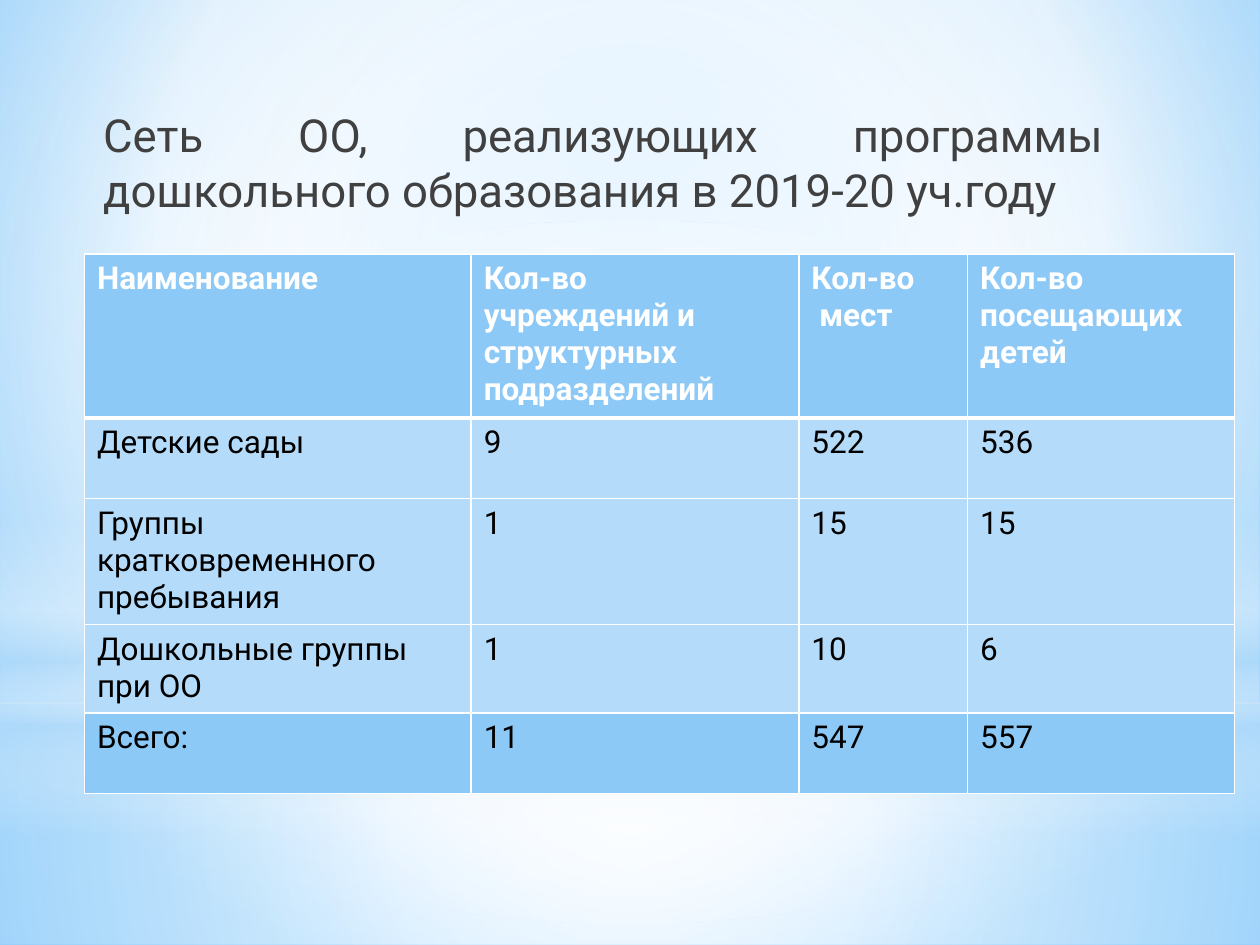
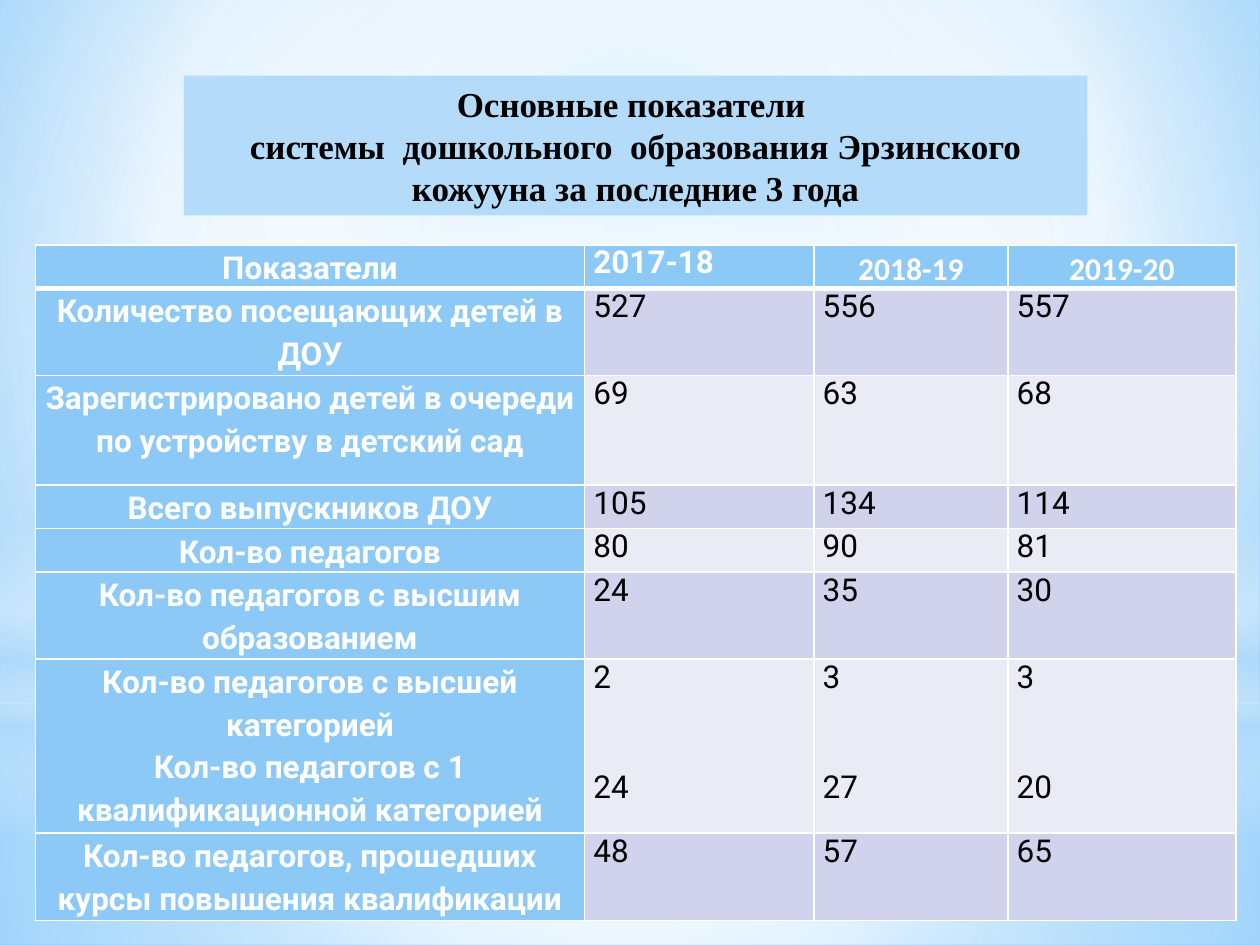
from lxml.etree import SubElement
from pptx import Presentation
from pptx.dml.color import RGBColor
from pptx.enum.shapes import MSO_SHAPE
from pptx.enum.text import MSO_ANCHOR, PP_ALIGN
from pptx.oxml.ns import qn
from pptx.util import Inches, Pt

WIDTH, HEIGHT = Inches(10), Inches(7.5)
WHITE = RGBColor(0xFF, 0xFF, 0xFF)
BLACK = RGBColor(0x00, 0x00, 0x00)
GRAPHITE = RGBColor(0x40, 0x40, 0x40)
SKY = RGBColor(0x9E, 0xD5, 0xFF)
AZURE = RGBColor(0x5B, 0xB9, 0xFF)
BLUE = RGBColor(0x8C, 0xC9, 0xF7)
PALE_BLUE = RGBColor(0xB4, 0xDC, 0xFA)
LILAC = RGBColor(0xD0, 0xD3, 0xEB)
PALE_LILAC = RGBColor(0xE9, 0xEB, 0xF5)
SANS, SERIF, HUMANIST = "Roboto", "Times New Roman", "Calibri"
CENTRE = (50, 50, 50, 50)

GLOWS = [
    (MSO_SHAPE.RECTANGLE, (0, 0.744, 1, 0.256),
     [(0, WHITE, 91), (37, WHITE, 76), (100, PALE_BLUE, 79)], CENTRE),
    (MSO_SHAPE.RECTANGLE, (0, 0, 1, 0.744),
     [(0, WHITE, 89), (48, WHITE, 62), (100, PALE_BLUE, 79)], CENTRE),
    (MSO_SHAPE.RECTANGLE, (0, 0.55, 1, 0.333),
     [(0, WHITE, 0), (29, WHITE, 30), (45, PALE_BLUE, 40),
      (55, WHITE, 26), (65, PALE_BLUE, 60), (100, WHITE, 0)], None),
    (MSO_SHAPE.OVAL, (0, 0.233, 1, 0.744),
     [(0, WHITE, 100), (56, WHITE, 0)], CENTRE),
]

NETWORK = [
    ["Наименование", "Кол-во\nучреждений и структурных подразделений",
     "Кол-во\n мест", "Кол-во\nпосещающих\nдетей"],
    ["Детские сады", "9", "522", "536"],
    ["Группы кратковременного пребывания", "1", "15", "15"],
    ["Дошкольные группы при ОО", "1", "10", "6"],
    ["Всего:", "11", "547", "557"],
]

INDICATORS = [
    ["Показатели", "2017-18", "2018-19", "2019-20"],
    ["Количество посещающих детей в ДОУ", "527", "556", "557"],
    ["Зарегистрировано детей в очереди по устройству в детский сад",
     "69", "63", "68"],
    ["Всего выпускников ДОУ", "105", "134", "114"],
    ["Кол-во педагогов", "80", "90", "81"],
    ["Кол-во педагогов с высшим образованием", "24", "35", "30"],
    ["Кол-во педагогов с высшей категорией\n"
     "Кол-во педагогов с 1 квалификационной категорией",
     "2\n24", "3\n27", "3\n20"],
    ["Кол-во педагогов, прошедших курсы повышения квалификации",
     "48", "57", "65"],
]


def place(box):
    x, y, w, h = box
    return int(x * WIDTH), int(y * HEIGHT), int(w * WIDTH), int(h * HEIGHT)


def set_gradient(fill, element, stops, focus):
    fill.gradient()
    grad = element.find(".//" + qn("a:gradFill"))
    for child in list(grad):
        grad.remove(child)
    gs_list = SubElement(grad, qn("a:gsLst"))
    for pos, color, alpha in stops:
        gs = SubElement(gs_list, qn("a:gs"), pos=str(pos * 1000))
        clr = SubElement(gs, qn("a:srgbClr"), val=str(color))
        if alpha < 100:
            SubElement(clr, qn("a:alpha"), val=str(alpha * 1000))
    if focus:
        route = SubElement(grad, qn("a:path"))
        route.set("path", "circle")
        SubElement(route, qn("a:fillToRect"),
                   {k: str(v * 1000) for k, v in zip("ltrb", focus)})
    else:
        SubElement(grad, qn("a:lin"), ang="5400000", scaled="0")


def format_text(p, font, size, color, bold=False):
    for r in p.runs:
        r.font.name, r.font.size, r.font.bold = font, Pt(size), bold
        r.font.color.rgb = color


def set_borders(cell, widths):
    tc_pr = cell._tc.get_or_add_tcPr()
    for i, (side, width) in enumerate(zip("LRTB", widths)):
        ln = SubElement(tc_pr, qn("a:ln" + side), w=str(Pt(width)))
        solid = SubElement(ln, qn("a:solidFill"))
        SubElement(solid, qn("a:srgbClr"), val=str(WHITE))
        tc_pr.remove(ln)
        tc_pr.insert(i, ln)


def add_glow_slide(prs):
    slide = prs.slides.add_slide(prs.slide_layouts[6])
    for shape, box, stops, focus in GLOWS:
        sp = slide.shapes.add_shape(shape, *place(box))
        sp.shadow.inherit = False
        sp.line.fill.background()
        set_gradient(sp.fill, sp._element, stops, focus)
    return slide


def add_grid(slide, box, data, cols, rows, style_cell):
    x, y, w, h = place(box)
    table = slide.shapes.add_table(len(data), len(cols), x, y, w, h).table
    for column, share in zip(table.columns, cols):
        column.width = int(w * share / sum(cols))
    for row, share in zip(table.rows, rows):
        row.height = int(h * share / sum(rows))
    for i, values in enumerate(data):
        for j, value in enumerate(values):
            cell = table.cell(i, j)
            cell.text_frame.text = value
            cell.fill.solid()
            style_cell(cell, i, j)
            set_borders(cell, (1, 1, 3 if i == 1 else 1, 3 if i == 0 else 1))


def style_network_cell(cell, i, j):
    cell.fill.fore_color.rgb = BLUE if i in (0, len(NETWORK) - 1) else PALE_BLUE
    for p in cell.text_frame.paragraphs:
        format_text(p, SANS, 18, BLACK if i else WHITE, i == 0)


def style_indicator_cell(cell, i, j):
    heading = i == 0 or j == 0
    band = LILAC if i % 2 else PALE_LILAC
    cell.fill.fore_color.rgb = BLUE if heading else band
    cell.margin_left = cell.margin_right = Inches(0.07)
    cell.margin_top = cell.margin_bottom = 0
    font = HUMANIST if i == 0 and j > 1 else SANS
    for k, p in enumerate(cell.text_frame.paragraphs):
        if heading and (i, j) != (0, 1):
            p.alignment, p.line_spacing = PP_ALIGN.CENTER, 1.15
        elif k:
            p.space_before = Pt(42)
        format_text(p, font, 18, WHITE if heading else BLACK, heading)


def add_plain_title(slide, box, text):
    tf = slide.shapes.add_textbox(*place(box)).text_frame
    tf.word_wrap = True
    tf.text = text
    p = tf.paragraphs[0]
    p.alignment = PP_ALIGN.JUSTIFY
    p.space_before, p.space_after = Pt(5), Pt(3)
    p._p.get_or_add_pPr().set("marL", str(Inches(0.05)))
    format_text(p, SANS, 26, GRAPHITE)


def add_title_plate(slide, box, text):
    sp = slide.shapes.add_shape(MSO_SHAPE.RECTANGLE, *place(box))
    sp.shadow.inherit = False
    sp.fill.solid()
    sp.fill.fore_color.rgb = PALE_BLUE
    sp.line.fill.background()
    tf = sp.text_frame
    tf.word_wrap = True
    tf.vertical_anchor = MSO_ANCHOR.MIDDLE
    tf.text = text
    for p in tf.paragraphs:
        p.alignment = PP_ALIGN.CENTER
        format_text(p, SERIF, 20, BLACK, True)


def build_network_slide(prs):
    slide = add_glow_slide(prs)
    add_plain_title(slide, (0.067, 0.107, 0.819, 0.781),
                    "Сеть ОО, реализующих программы дошкольного образования "
                    "в 2019-20 уч.году")
    add_grid(slide, (0.067, 0.269, 0.913, 0.563), NETWORK,
             (3.07, 2.6, 1.34, 2.12), (1.27, 0.64, 0.98, 0.69, 0.64),
             style_network_cell)


def build_indicators_slide(prs):
    slide = add_glow_slide(prs)
    add_title_plate(slide, (0.146, 0.08, 0.717, 0.148),
                    "Основные показатели \nсистемы  дошкольного  образования "
                    "Эрзинского кожууна за последние 3 года")
    add_grid(slide, (0.028, 0.259, 0.953, 0.713), INDICATORS,
             (4.36, 1.82, 1.54, 1.81),
             (0.34, 0.69, 0.87, 0.34, 0.34, 0.69, 1.38, 0.69),
             style_indicator_cell)


def main():
    prs = Presentation()
    prs.slide_width, prs.slide_height = WIDTH, HEIGHT
    master = prs.slide_master
    set_gradient(master.background.fill, master.element,
                 [(0, SKY, 100), (60, WHITE, 100), (100, AZURE, 100)],
                 (20, 10, 20, 60))
    build_network_slide(prs)
    build_indicators_slide(prs)
    prs.save("out.pptx")


if __name__ == "__main__":
    main()
